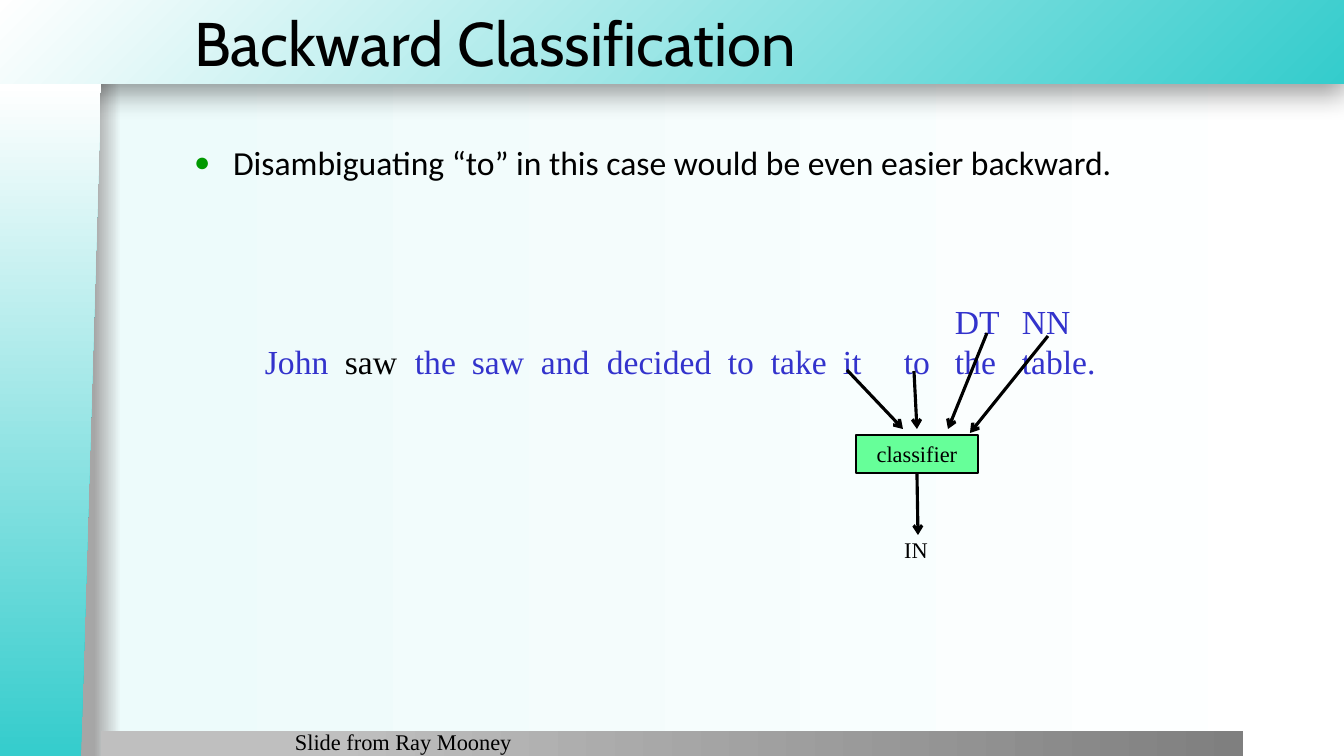
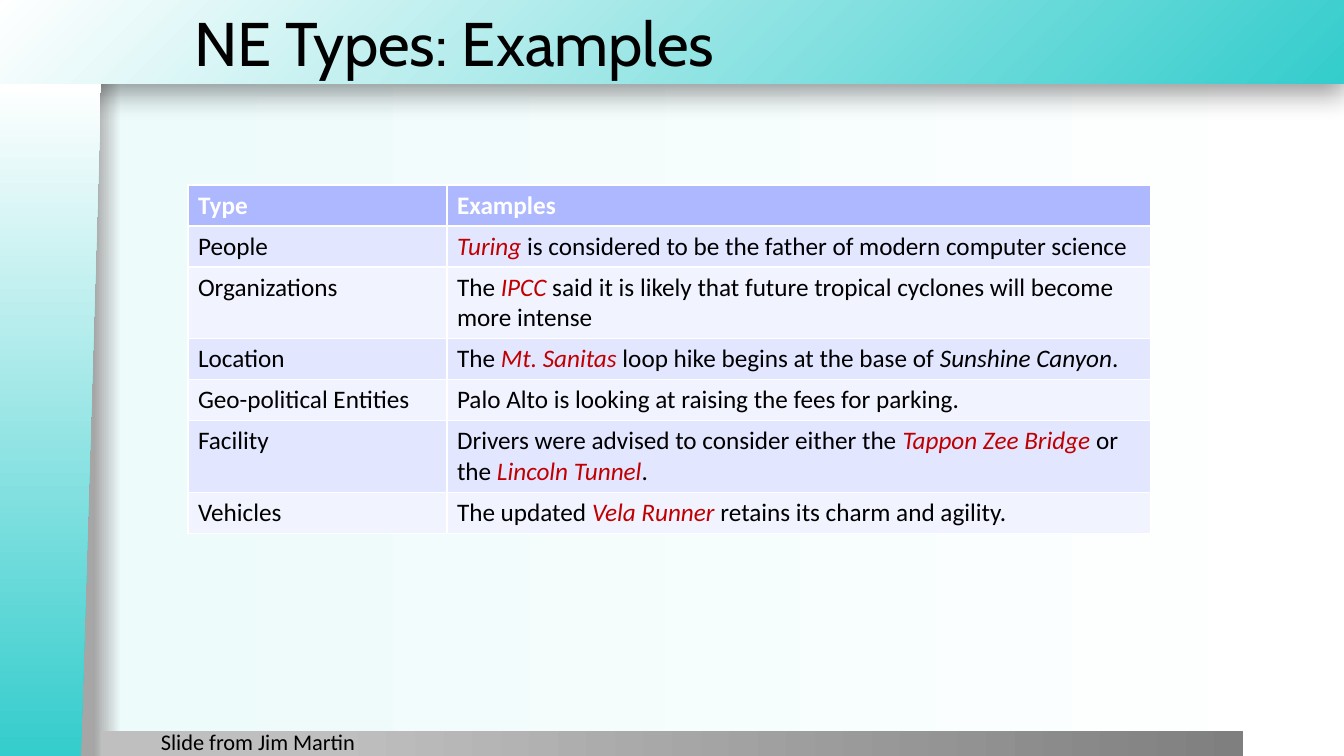
from lxml import etree
from pptx import Presentation
from pptx.dml.color import RGBColor
from pptx.enum.shapes import MSO_CONNECTOR as CONNECTOR, MSO_SHAPE as SHAPE
from pptx.enum.text import MSO_ANCHOR as ANCHOR, MSO_AUTO_SIZE as AUTO_SIZE, PP_ALIGN as ALIGN
from pptx.oxml import parse_xml
from pptx.oxml.ns import nsdecls, qn
from pptx.util import Emu, Pt

SLIDE_WIDTH, SLIDE_HEIGHT = 1344, 756
SCALE = 12192000 / SLIDE_WIDTH
COLORS = {
    "teal": "34CCCC", "white": "FFFFFF", "black": "000000",
    "edge": "A6A6A6", "mist": "EDFBFB", "silver": "BFBFBF", "gray": "7F7F7F",
    "bullet": "009900", "word": "3333CC", "classifier": "66FF99", "entity": "C00000",
    "header": "ADB8FF", "odd_row": "E3E6FF", "even_row": "F1F3FF",
}
TITLE_FONT, BODY_FONT, SERIF_FONT = "Cabin", "Calibri", "Times New Roman"
TITLE_BOX = (184, 0, 1160, 84)


def px(length):
    return Emu(round(length * SCALE))


def box_emu(box):
    return [px(length) for length in box]


def rgb(name):
    return RGBColor.from_string(COLORS[name])


def add_child(parent, tag, **attributes):
    child = etree.SubElement(parent, qn(tag))
    for key, value in attributes.items():
        child.set(key, str(value))
    return child


# Text
def add_run(paragraph, text, size, font, color="black", bold=False, italic=False):
    run = paragraph.add_run()
    run.text = text
    run.font.size, run.font.name = Pt(size), font
    run.font.bold, run.font.italic = bold, italic
    run.font.color.rgb = rgb(color)


def add_text(slide, box, text, size, font, align=ALIGN.LEFT):
    frame = slide.shapes.add_textbox(*box_emu(box)).text_frame
    frame.word_wrap = True
    paragraph = frame.paragraphs[0]
    paragraph.alignment = align
    add_run(paragraph, text, size, font)


def fill_placeholder(placeholder, box, text, size, font, anchor):
    placeholder.left, placeholder.top, placeholder.width, placeholder.height = box_emu(box)
    frame = placeholder.text_frame
    frame.auto_size = AUTO_SIZE.NONE
    frame.vertical_anchor = anchor
    paragraph = frame.paragraphs[0]
    paragraph.alignment = ALIGN.LEFT
    add_run(paragraph, text, size, font)
    return paragraph


def set_bullet(paragraph, indent):
    properties = paragraph._p.get_or_add_pPr()
    properties.set("marL", str(px(indent)))
    properties.set("indent", str(-px(indent)))
    color = add_child(properties, "a:buClr")
    add_child(color, "a:srgbClr", val=COLORS["bullet"])
    add_child(properties, "a:buSzPct", val=80000)
    add_child(properties, "a:buFont", typeface="Arial")
    add_child(properties, "a:buChar", char="●")


def set_tab_stops(paragraph, positions):
    tabs = add_child(paragraph._p.get_or_add_pPr(), "a:tabLst")
    for position in positions:
        add_child(tabs, "a:tab", pos=px(position), algn="l")


# Shared look, kept on the slide master
def set_gradient(fill, element, stops, corner=False):
    fill.gradient()
    gradient = element.find(".//" + qn("a:gradFill"))
    for child in list(gradient):
        gradient.remove(child)
    gradient.set("rotWithShape", "1")
    stop_list = add_child(gradient, "a:gsLst")
    for position, color in stops:
        stop = add_child(stop_list, "a:gs", pos=position * 1000)
        add_child(stop, "a:srgbClr", val=COLORS[color])
    if corner:
        shade = add_child(gradient, "a:path", path="circle")
        add_child(shade, "a:fillToRect", l=100000, t=100000)
    else:
        add_child(gradient, "a:lin", ang=0, scaled=0)


def add_band(slide, master, kind, box, stops, corner=False):
    band = slide.shapes.add_shape(kind, *box_emu(box))
    band.shadow.inherit = False
    band.line.fill.background()
    set_gradient(band.fill, band._element, stops, corner)
    master.shapes._spTree.append(band._element)
    return band


def build_master(master, slide):
    set_gradient(master.background.fill, master._element,
                 [(7, "edge"), (9, "mist"), (100, "white")])
    teal_to_white = [(0, "teal"), (100, "white")]

    # Title band with its soft shadow
    title_band = add_band(slide, master, SHAPE.RECTANGLE, (-1, 0, 1345, 84),
                          teal_to_white, corner=True)
    effects = title_band._element.spPr.find(qn("a:effectLst"))
    effects.append(parse_xml(
        f'<a:outerShdw {nsdecls("a")} blurRad="{Pt(20)}" dist="{Pt(6)}" dir="5400000" '
        f'algn="t" rotWithShape="0"><a:srgbClr val="{COLORS["black"]}">'
        '<a:alpha val="40000"/></a:srgbClr></a:outerShdw>'))

    # Footer band and slanted side band
    add_band(slide, master, SHAPE.RECTANGLE, (101, 731, 1142, 26),
             [(20, "silver"), (100, "gray")])
    side_band = add_band(slide, master, SHAPE.FLOWCHART_MANUAL_INPUT,
                         (-286, 370, 673, 101), teal_to_white)
    side_band.rotation = 270
    side_band._element.spPr.find(qn("a:xfrm")).set("flipV", "1")


def start_slide(slide, title):
    fill_placeholder(slide.shapes.title, TITLE_BOX, title, 44, TITLE_FONT, ANCHOR.MIDDLE)


# Tagging diagram
def add_arrow(slide, start, end):
    arrow = slide.shapes.add_connector(CONNECTOR.STRAIGHT, *box_emu(start + end))
    arrow.line.color.rgb = rgb("black")
    arrow.line.width = Pt(2.25)
    add_child(arrow.line._get_or_add_ln(), "a:tailEnd", type="arrow")
    add_child(arrow._element.spPr, "a:effectLst")
    return arrow


def add_sentence(slide, box):
    frame = slide.shapes.add_textbox(*box_emu(box)).text_frame
    frame.word_wrap = True
    tags, words = frame.paragraphs[0], frame.add_paragraph()
    stops = [80, 150, 207, 276, 342, 463, 506, 578, 639, 690, 757]
    set_tab_stops(tags, stops[-2:])
    set_tab_stops(words, stops)
    add_run(tags, "\tDT\tNN", 24, SERIF_FONT, "word")
    for text, color in [
            ("John\t", "word"), ("saw\t", "black"),
            ("the\tsaw\tand\tdecided\tto\ttake\tit\tto\tthe\ttable.", "word")]:
        add_run(words, text, 24, SERIF_FONT, color)


def add_tagging_diagram(slide, box):
    left, top, width, height = box
    add_sentence(slide, (left, top, width, 92))

    classifier = slide.shapes.add_shape(
        SHAPE.RECTANGLE, *box_emu((left + 601, top + 139, 122, 38)))
    classifier.shadow.inherit = False
    classifier.fill.solid()
    classifier.fill.fore_color.rgb = rgb("classifier")
    classifier.line.color.rgb = rgb("black")
    classifier.line.width = Pt(1)
    paragraph = classifier.text_frame.paragraphs[0]
    paragraph.alignment = ALIGN.CENTER
    add_run(paragraph, "classifier", 16, SERIF_FONT)

    # Features going in
    for start, end in [((592, 74), (648, 133)), ((659, 75), (662, 133)),
                       ((732, 37), (693, 133)), ((793, 40), (715, 137))]:
        add_arrow(slide, (left + start[0], top + start[1]), (left + end[0], top + end[1]))

    # Tag coming out
    output = add_arrow(slide, (left + 662, top + 177), (left + 663, top + 239))
    output.begin_connect(classifier, 2)
    add_text(slide, (left + 622, top + 235, 78, height - 235), "IN", 16, SERIF_FONT,
             ALIGN.CENTER)


# Table of examples
def add_examples_table(slide, box, rows):
    table = slide.shapes.add_table(len(rows), 2, *box_emu(box)).table
    for column, width in zip(table.columns, (259, box[2] - 259)):
        column.width = px(width)
    for index, row in enumerate(rows):
        table.rows[index].height = px(41)
        is_header = index == 0
        fill = "header" if is_header else "odd_row" if index % 2 else "even_row"
        for cell, runs in zip(table.rows[index].cells, row):
            cell.fill.solid()
            cell.fill.fore_color.rgb = rgb(fill)
            for text, style in runs:
                color = "white" if is_header else "entity" if style == "entity" else "black"
                add_run(cell.text_frame.paragraphs[0], text, 18, BODY_FONT, color,
                        bold=is_header, italic=style != "plain")


def plain(text):
    return text, "plain"


def entity(text):
    return text, "entity"


EXAMPLES = [
    ("Type", [plain("Examples")]),
    ("People", [entity("Turing "),
                plain("is considered to be the father of modern computer science")]),
    ("Organizations", [plain("The "), entity("IPCC "),
                       plain("said it is likely that future tropical cyclones "
                             "will become more intense")]),
    ("Location", [plain("The "), entity("Mt. Sanitas "),
                  plain("loop hike begins at the base of "),
                  ("Sunshine Canyon", "italic"), plain(".")]),
    ("Geo-political Entities",
     [plain("Palo Alto is looking at raising the fees for parking.")]),
    ("Facility", [plain("Drivers were advised to consider either the "),
                  entity("Tappon Zee Bridge"), plain(" or the "),
                  entity("Lincoln Tunnel"), plain(".")]),
    ("Vehicles", [plain("The updated "), entity("Vela Runner "),
                  plain("retains its charm and agility.")]),
]


def build_classification_slide(slide):
    start_slide(slide, "Backward Classification")
    point = fill_placeholder(
        slide.placeholders[1], (184, 137, 1058, 584),
        "Disambiguating “to” in this case would be even easier backward.",
        24, BODY_FONT, ANCHOR.TOP)
    set_bullet(point, 39)
    add_tagging_diagram(slide, (255, 296, 858, 272))
    add_text(slide, (285, 723, 345, 25), "Slide from Ray Mooney", 16, SERIF_FONT)


def build_examples_slide(slide):
    start_slide(slide, "NE Types: Examples")
    rows = [([plain(kind)], example) for kind, example in EXAMPLES]
    add_examples_table(slide, (188, 185, 963, 287), rows)
    add_text(slide, (151, 723, 260, 33), "Slide from Jim Martin", 16, BODY_FONT)


def main():
    presentation = Presentation()
    presentation.slide_width, presentation.slide_height = px(SLIDE_WIDTH), px(SLIDE_HEIGHT)
    layouts = presentation.slide_layouts
    classification = presentation.slides.add_slide(layouts[1])
    examples = presentation.slides.add_slide(layouts[5])
    build_master(presentation.slide_master, classification)
    build_classification_slide(classification)
    build_examples_slide(examples)
    presentation.save("out.pptx")


if __name__ == "__main__":
    main()
